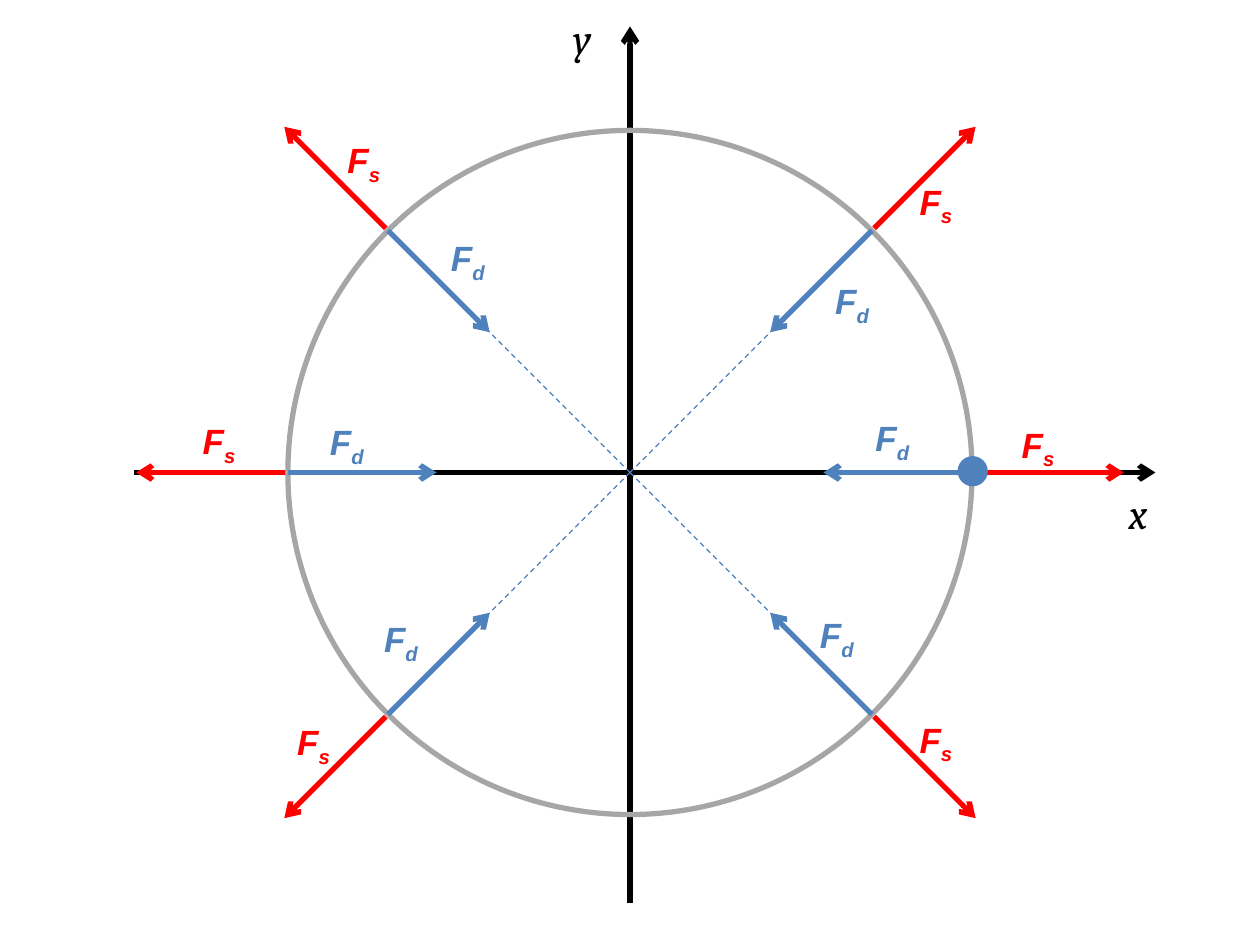
from dataclasses import dataclass
from math import cos, radians, sin

from lxml import etree
from pptx import Presentation
from pptx.dml.color import RGBColor
from pptx.enum.dml import MSO_LINE
from pptx.enum.shapes import MSO_CONNECTOR, MSO_SHAPE
from pptx.enum.text import MSO_AUTO_SIZE
from pptx.oxml.ns import qn
from pptx.util import Inches, Pt

STRAIGHT = MSO_CONNECTOR.STRAIGHT
OVAL = MSO_SHAPE.OVAL
DASH = MSO_LINE.DASH
FIT_SHAPE = MSO_AUTO_SIZE.SHAPE_TO_FIT_TEXT


@dataclass(frozen=True)
class Theme:
    axis: RGBColor = RGBColor(0x00, 0x00, 0x00)
    orbit: RGBColor = RGBColor(0xA6, 0xA6, 0xA6)
    inward: RGBColor = RGBColor(0x4F, 0x81, 0xBD)
    outward: RGBColor = RGBColor(0xFF, 0x00, 0x00)
    axis_font: str = "Cambria"
    force_font: str = "Arial"
    axis_size: int = 24
    force_size: int = 20
    heavy: float = 3
    thin: float = 0.75


THEME = Theme()
COLUMNS, ROWS = 100, 75
CELL = Inches(10) // COLUMNS
CENTER = (COLUMNS / 2, ROWS / 2)
RADIUS = 27.15
ARROW_GAP = 0.25
AXIS_REACH, DIAGONAL_REACH = 11.8, 11.4

# angle: (outward label position, inward label position)
FORCE_LABELS = {
    0: ((80.1, 33.1), (68.5, 32.6)),
    45: ((72, 13.8), (65.3, 21.7)),
    135: ((26.6, 10.5), (34.8, 18.3)),
    180: ((15.1, 32.8), (25.2, 32.9)),
    225: ((22.6, 56.7), (29.5, 48.5)),
    315: ((72, 56.5), (64.1, 48.2)),
}


def grid(value):
    return round(value * CELL)


def polar(distance, angle):
    return (CENTER[0] + distance * cos(radians(angle)),
            CENTER[1] - distance * sin(radians(angle)))


def add_line(slide, start, end, color, width=THEME.heavy, arrow=True):
    connector = slide.shapes.add_connector(STRAIGHT, *map(grid, (*start, *end)))
    connector.line.color.rgb = color
    connector.line.width = Pt(width)
    if arrow:
        line_element = connector.line._get_or_add_ln()
        etree.SubElement(line_element, qn("a:tailEnd"), type="arrow")
    else:
        connector.line.dash_style = DASH
    etree.SubElement(connector._element.spPr, qn("a:effectLst"))


def add_circle(slide, center, radius, fill=None, outline=None):
    left, top = center[0] - radius, center[1] - radius
    shape = slide.shapes.add_shape(
        OVAL, *map(grid, (left, top, 2 * radius, 2 * radius)))
    shape.shadow.inherit = False
    if fill:
        shape.fill.solid()
        shape.fill.fore_color.rgb = fill
    else:
        shape.fill.background()
    if outline:
        shape.line.color.rgb = outline
        shape.line.width = Pt(THEME.heavy)
    else:
        shape.line.fill.background()


def add_label(slide, position, size, text, font_name, font_size, color,
              bold=False, subscript=None):
    box = slide.shapes.add_textbox(*map(grid, (*position, *size)))
    frame = box.text_frame
    frame.word_wrap = True
    frame.auto_size = FIT_SHAPE
    paragraph = frame.paragraphs[0]
    paragraph.add_run().text = text
    if subscript:
        run = paragraph.add_run()
        run.text = subscript
        run._r.get_or_add_rPr().set("baseline", "-25000")
    font = paragraph.font
    font.name, font.size = font_name, Pt(font_size)
    font.bold, font.italic = bold, True
    font.color.rgb = color


def add_axes(slide):
    middle_column, middle_row = CENTER
    add_line(slide, (10.6, middle_row), (91.7, middle_row), THEME.axis)
    add_line(slide, (middle_column, 71.7), (middle_column, 2.1), THEME.axis)
    for name, position in (("x", (88.6, 38.2)), ("y", (44.5, 0.5))):
        add_label(slide, position, (11, 5), name,
                  THEME.axis_font, THEME.axis_size, THEME.axis)


def add_forces(slide, angle):
    diagonal = angle % 90 != 0
    reach = DIAGONAL_REACH if diagonal else AXIS_REACH
    if diagonal:
        add_line(slide, CENTER, polar(RADIUS, angle), THEME.inward,
                 THEME.thin, arrow=False)
    add_line(slide, polar(RADIUS, angle), polar(RADIUS - reach, angle),
             THEME.inward)
    start = RADIUS + ARROW_GAP
    add_line(slide, polar(start, angle), polar(start + reach, angle),
             THEME.outward)


def add_force_labels(slide, outward_position, inward_position):
    for position, subscript, color in (
            (outward_position, "s", THEME.outward),
            (inward_position, "d", THEME.inward)):
        add_label(slide, position, (19.7, 4.4), "F", THEME.force_font,
                  THEME.force_size, color, bold=True, subscript=subscript)


def main():
    presentation = Presentation()
    presentation.slide_width = CELL * COLUMNS
    presentation.slide_height = CELL * ROWS
    slide = presentation.slides.add_slide(presentation.slide_layouts[6])

    add_axes(slide)
    add_circle(slide, CENTER, RADIUS, outline=THEME.orbit)
    for angle in FORCE_LABELS:
        add_forces(slide, angle)
    add_circle(slide, (77.2, 37.4), 1.2, fill=THEME.inward)
    for positions in FORCE_LABELS.values():
        add_force_labels(slide, *positions)

    presentation.save("out.pptx")


if __name__ == "__main__":
    main()
